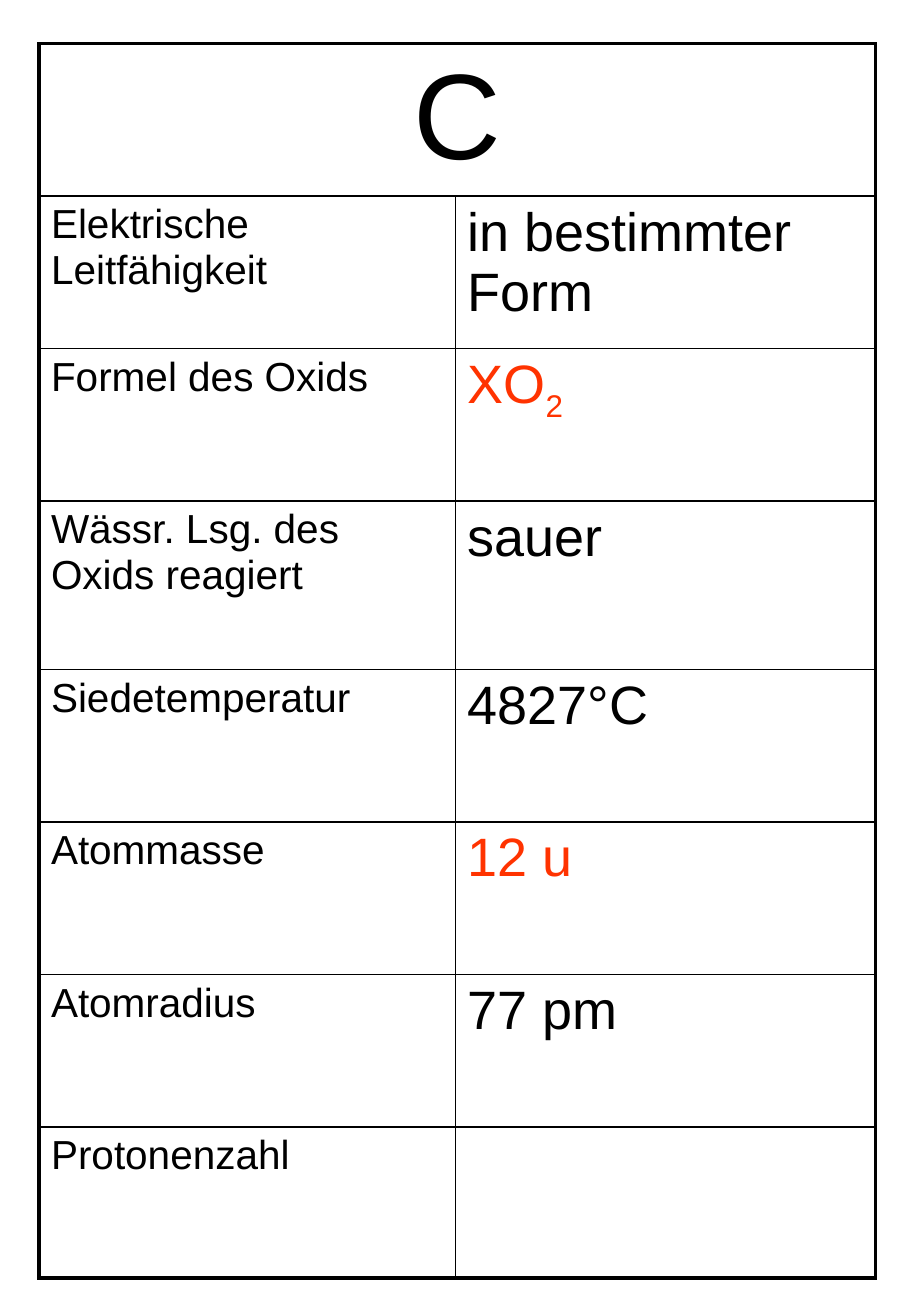
from dataclasses import dataclass

from lxml.etree import SubElement
from pptx import Presentation
from pptx.dml.color import RGBColor
from pptx.enum.text import PP_ALIGN as Align
from pptx.oxml.ns import qn
from pptx.table import Table, _Cell as Cell
from pptx.util import Emu, Pt

EMU_PER_PX = 4572  # 200 px to the inch


@dataclass(frozen=True)
class Theme:
    font: str = "Arial"
    ink: str = "000000"
    accent: str = "FF3300"
    symbol_size: int = 72
    label_size: int = 24
    value_size: int = 32
    outer_line: float = 2.25
    inner_line: float = 1


@dataclass(frozen=True)
class Property:
    label: str
    value: str = ""
    subscript: str = ""
    highlighted: bool = False
    height: int = 251


THEME = Theme()
SYMBOL = "C"
SYMBOL_HEIGHT = 251
SLIDE_WIDTH, SLIDE_HEIGHT = 1500, 2166
TABLE_LEFT, TABLE_TOP = 64, 72
COLUMN_WIDTHS = (686, 692)
PROPERTIES = (
    Property("Elektrische Leitfähigkeit", "in bestimmter Form"),
    Property("Formel des Oxids", "XO", subscript="2", highlighted=True),
    Property("Wässr. Lsg. des Oxids reagiert", "sauer", height=277),
    Property("Siedetemperatur", "4827°C"),
    Property("Atommasse", "12 u", highlighted=True),
    Property("Atomradius", "77 pm"),
    Property("Protonenzahl", height=249),
)


def px(length: int) -> Emu:
    return Emu(length * EMU_PER_PX)


def write(cell: Cell, text: str, size: int, color: str = THEME.ink,
          subscript: bool = False) -> None:
    """Append one run to the cell's paragraph."""
    run = cell.text_frame.paragraphs[0].add_run()
    run.text = text
    for name, value in {"name": THEME.font, "size": Pt(size)}.items():
        setattr(run.font, name, value)
    run.font.color.rgb = RGBColor.from_string(color)
    if subscript:
        run.font._element.set("baseline", "-25000")


def set_borders(cell: Cell, widths: dict[str, float]) -> None:
    """Draw the sides, given in schema order L, R, T, B."""
    properties = cell._tc.get_or_add_tcPr()
    for side, width in widths.items():
        line = SubElement(properties, qn(f"a:ln{side}"), w=str(Pt(width)))
        fill = SubElement(line, qn("a:solidFill"))
        SubElement(fill, qn("a:srgbClr"), val=THEME.ink)


def format_grid(table: Table) -> None:
    """Give the table a heavy frame and thin inner lines."""
    last_row, last_column = len(table.rows) - 1, len(table.columns) - 1
    for row in range(last_row + 1):
        for column in range(last_column + 1):
            cell = table.cell(row, column)
            on_frame = {
                "L": column == 0 or cell.is_spanned,
                "R": column == last_column or cell.is_merge_origin,
                "T": row == 0,
                "B": row == last_row,
            }
            set_borders(cell, {
                side: THEME.outer_line if outer else THEME.inner_line
                for side, outer in on_frame.items()
            })
            cell.fill.background()


def main() -> None:
    presentation = Presentation()
    presentation.slide_width = px(SLIDE_WIDTH)
    presentation.slide_height = px(SLIDE_HEIGHT)
    slide = presentation.slides.add_slide(presentation.slide_layouts[6])

    heights = [SYMBOL_HEIGHT, *(item.height for item in PROPERTIES)]
    table = slide.shapes.add_table(
        len(heights), len(COLUMN_WIDTHS), px(TABLE_LEFT), px(TABLE_TOP),
        px(sum(COLUMN_WIDTHS)), px(sum(heights))).table
    table.first_row = table.horz_banding = False
    for column, width in zip(table.columns, COLUMN_WIDTHS):
        column.width = px(width)
    for row, height in zip(table.rows, heights):
        row.height = px(height)

    symbol_cell = table.cell(0, 0)
    symbol_cell.merge(table.cell(0, 1))
    write(symbol_cell, SYMBOL, THEME.symbol_size)
    symbol_cell.text_frame.paragraphs[0].alignment = Align.CENTER

    for row, item in enumerate(PROPERTIES, start=1):
        write(table.cell(row, 0), item.label, THEME.label_size)
        color = THEME.accent if item.highlighted else THEME.ink
        value_cell = table.cell(row, 1)
        if item.value:
            write(value_cell, item.value, THEME.value_size, color)
        if item.subscript:
            write(value_cell, item.subscript, THEME.value_size, color, subscript=True)

    format_grid(table)
    presentation.save("out.pptx")


if __name__ == "__main__":
    main()
